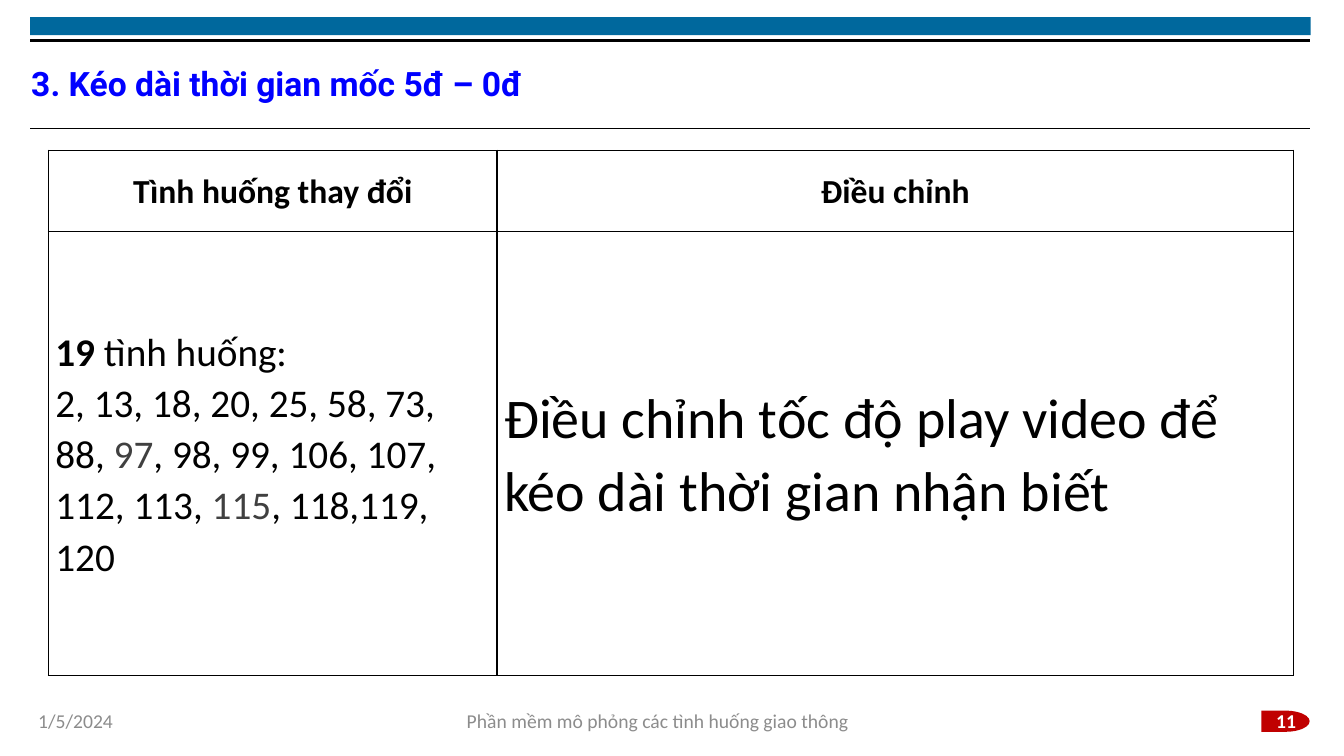
from dataclasses import dataclass

from lxml import etree
from pptx import Presentation
from pptx.dml.color import RGBColor
from pptx.enum import shapes, text
from pptx.oxml.ns import qn
from pptx.util import Inches, Pt

# Content: a paragraph is a list of (words, style) runs
TITLE = "3. Kéo dài thời gian mốc 5đ – 0đ"
HEADERS = ["Tình huống thay đổi", "Điều chỉnh"]
SITUATIONS = [
    [("19", "list_bold"), (" tình huống:", "list")],
    [("2, 13, 18, 20, 25, 58, 73, 88, ", "list"), ("97", "list_grey"),
     (", 98, 99, 106, 107, 112, 113, ", "list"), ("115", "list_grey"),
     (", 118,119, 120", "list")],
]
ADJUSTMENT = [[("Điều chỉnh tốc độ play video để kéo dài thời gian nhận biết", "large")]]
LEFT, CENTER = text.PP_ALIGN.LEFT, text.PP_ALIGN.CENTER
FOOTERS = [  # words, style, left, width, alignment
    ("1/5/2024", "footer", 0.28, 1.31, LEFT),
    ("Phần mềm mô phỏng các tình huống giao thông", "footer", 1.81, 9.43, CENTER),
    ("11", "number", 12.51, 0.49, CENTER),
]
RULES = [(0.4, 2.25), (1.27, 0.6)]  # top, weight
COLUMNS = [4.45, 7.9]
ROWS = [0.81, 4.4]


@dataclass(frozen=True)
class Theme:
    black: str = "000000"
    white: str = "FFFFFF"
    band: str = "00689D"
    badge: str = "C00000"
    blue: str = "0000FF"
    dark_grey: str = "404040"
    grey: str = "8C8C8C"
    body: str = "Calibri"
    heading: str = "Roboto"


THEME = Theme()
STYLES = {  # font, size, bold, colour
    "title": (THEME.heading, 24, True, THEME.blue),
    "header": (THEME.body, 24, True, THEME.black),
    "list": (THEME.body, 28, False, THEME.black),
    "list_bold": (THEME.body, 28, True, THEME.black),
    "list_grey": (THEME.body, 28, False, THEME.dark_grey),
    "large": (THEME.body, 40, False, THEME.black),
    "footer": (THEME.body, 14, False, THEME.grey),
    "number": (THEME.body, 14, True, THEME.white),
}


def write(frame, paragraphs, align=LEFT, spacing=1.0):
    for index, runs in enumerate(paragraphs):
        para = frame.add_paragraph() if index else frame.paragraphs[0]
        para.alignment, para.line_spacing = align, spacing
        for words, style in runs:
            span = para.add_run()
            span.text = words
            font = span.font
            font.name, size, font.bold, color = STYLES[style]
            font.size = Pt(size)
            font.color.rgb = RGBColor.from_string(color)


def add_block(page, kind, box, color):
    block = page.shapes.add_shape(kind, *map(Inches, box))
    block.shadow.inherit = False
    block.fill.solid()
    block.fill.fore_color.rgb = RGBColor.from_string(color)
    block.line.fill.background()


def add_rule(page, top, weight):
    rule = page.shapes.add_connector(
        shapes.MSO_CONNECTOR.STRAIGHT, Inches(0.3), Inches(top), Inches(12.99), Inches(top))
    rule.line.color.rgb = RGBColor.from_string(THEME.black)
    rule.line.width = Pt(weight)
    etree.SubElement(rule._element.spPr, qn("a:effectLst"))


def add_title(page):
    title = page.shapes.title
    title.left, title.top, title.width, title.height = map(Inches, (0.31, 0.5, 12.69, 0.69))
    frame = title.text_frame
    frame.margin_left = frame.margin_right = frame.margin_top = frame.margin_bottom = 0
    frame.vertical_anchor = text.MSO_ANCHOR.MIDDLE
    frame.auto_size = text.MSO_AUTO_SIZE.NONE
    frame.word_wrap = True
    write(frame, [[(TITLE, "title")]], spacing=0.9)


def fill_cell(cell, paragraphs, align):
    cell.margin_left = cell.margin_right = Inches(0.07)
    cell.margin_top = cell.margin_bottom = 0
    cell.vertical_anchor = text.MSO_ANCHOR.MIDDLE
    write(cell.text_frame, paragraphs, align, 1.07)
    # Borders come before the fill in the cell properties
    props = cell._tc.get_or_add_tcPr()
    for side in ("a:lnL", "a:lnR", "a:lnT", "a:lnB"):
        border = etree.SubElement(props, qn(side), w=str(Pt(1)))
        paint = etree.SubElement(border, qn("a:solidFill"))
        etree.SubElement(paint, qn("a:srgbClr"), val=THEME.black)
    cell.fill.background()


def add_situation_table(page):
    box = (0.48, 1.49, sum(COLUMNS), sum(ROWS))
    table = page.shapes.add_table(len(ROWS), len(COLUMNS), *map(Inches, box)).table
    table.first_row = table.horz_banding = False
    for column, width in zip(table.columns, COLUMNS):
        column.width = Inches(width)
    for row, height in zip(table.rows, ROWS):
        row.height = Inches(height)
    for index, (header, body) in enumerate(zip(HEADERS, (SITUATIONS, ADJUSTMENT))):
        fill_cell(table.cell(0, index), [[(header, "header")]], CENTER)
        fill_cell(table.cell(1, index), body, LEFT)


def add_footer(page, words, style, left, width, align):
    box = page.shapes.add_textbox(*map(Inches, (left, 6.95, width, 0.4)))
    frame = box.text_frame
    frame.word_wrap = True
    frame.vertical_anchor = text.MSO_ANCHOR.MIDDLE
    write(frame, [[(words, style)]], align)


def main():
    deck = Presentation()
    deck.slide_width, deck.slide_height = Inches(13.33), Inches(7.5)
    page = deck.slides.add_slide(deck.slide_layouts[5])

    # Frame of the slide
    add_block(page, shapes.MSO_SHAPE.RECTANGLE, (0.3, 0.17, 12.7, 0.18), THEME.band)
    for top, weight in RULES:
        add_rule(page, top, weight)
    add_block(page, shapes.MSO_SHAPE.FLOWCHART_DELAY, (12.51, 7.05, 0.48, 0.21), THEME.badge)

    # Title, table and footer
    add_title(page)
    add_situation_table(page)
    for footer in FOOTERS:
        add_footer(page, *footer)
    deck.save("out.pptx")


if __name__ == "__main__":
    main()
